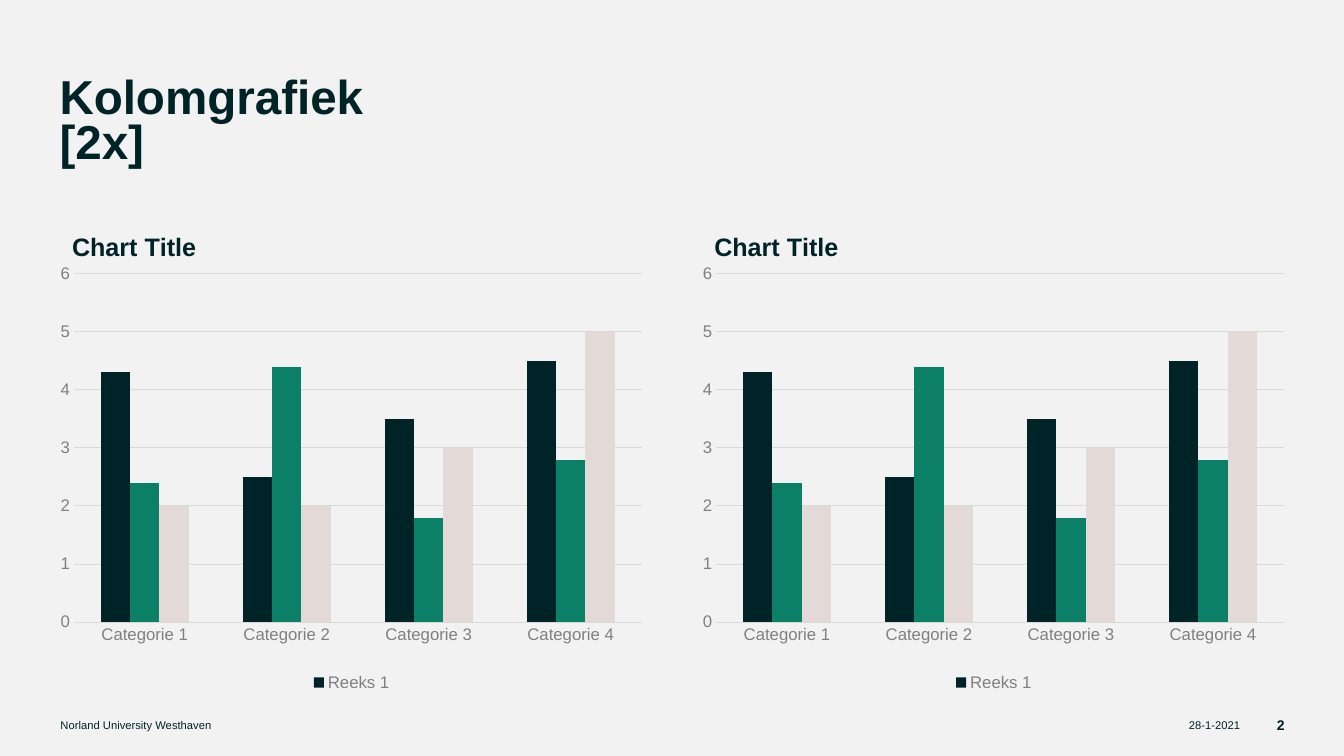
from dataclasses import dataclass
from typing import Any

from pptx import Presentation, oxml
from pptx import util as u
from pptx.chart import data
from pptx.dml import color
from pptx.enum import chart as ch, text
from pptx.oxml import ns

INK = color.RGBColor(0x00, 0x23, 0x28)
GREEN = color.RGBColor(0x0C, 0x80, 0x66)
SAND = color.RGBColor(0xE3, 0xDA, 0xD8)
GREY = color.RGBColor(0x80, 0x80, 0x80)
RULE = color.RGBColor(0xD9, 0xD9, 0xD9)
BLACK = color.RGBColor(0, 0, 0)
PAPER = color.RGBColor(0xF2, 0xF2, 0xF2)

GROUPS = [f"Categorie {n}" for n in range(1, 5)]
NO_PAD = dict.fromkeys(("margin_left", "margin_top", "margin_right", "margin_bottom"), 0)


@dataclass
class Series:
    name: str
    vals: tuple[float, ...]
    fill: color.RGBColor


@dataclass
class Label:
    words: str
    left: float
    width: float
    size: int = 8
    bold: bool = False
    align: Any = text.PP_ALIGN.RIGHT


SERIES = [
    Series("Reeks 1", (4.3, 2.5, 3.5, 4.5), INK),
    Series("Reeks 2", (2.4, 4.4, 1.8, 2.8), GREEN),
    Series("Reeks 3", (2, 2, 3, 5), SAND),
]
LABELS = [
    Label("Norland University Westhaven", 0.6, 10.79, align=text.PP_ALIGN.LEFT),
    Label("28-1-2021", 11.54, 0.76),
    Label("2", 12.45, 0.29, size=10, bold=True),
]
CHART_LEFTS = (6.97, 0.6)


def assign(item: Any, **vals: Any) -> None:
    for key, val in vals.items():
        setattr(item, key, val)


def style(font: Any, size: float, tint: color.RGBColor, bold: bool = False) -> None:
    assign(font, name="Arial", size=u.Pt(size), bold=bold)
    font.color.rgb = tint


def rule(line: Any) -> None:
    line.width = u.Pt(0.75)
    line.color.rgb = RULE


def node(xml: str) -> Any:
    head, tail = xml.split(">", 1) if not xml.endswith("/>") else (xml[:-2], None)
    opened = f"{head} {ns.nsdecls('c')}"
    return oxml.parse_xml(f"{opened}/>" if tail is None else f"{opened}>{tail}")


def layout(host: Any, spot: int, **vals: Any) -> None:
    for old in host.findall(ns.qn("c:layout")):
        host.remove(old)
    parts = "".join(f'<c:{key} val="{val}"/>' for key, val in vals.items())
    host.insert(spot, node(f"<c:layout><c:manualLayout>{parts}</c:manualLayout></c:layout>"))


def add_title(slide: Any) -> None:
    title = slide.shapes.title
    assign(title, left=u.Inches(0.59), top=u.Inches(0.79),
           width=u.Inches(12.15), height=u.Inches(0.78))
    frame = title.text_frame
    frame.text = "Kolomgrafiek\v[2x]"
    assign(frame, **NO_PAD, word_wrap=True, auto_size=text.MSO_AUTO_SIZE.NONE,
           vertical_anchor=text.MSO_ANCHOR.TOP)
    para = frame.paragraphs[0]
    assign(para, alignment=text.PP_ALIGN.LEFT, line_spacing=u.Pt(32))
    for run in para.runs:
        style(run.font, 34, INK, True)


def add_label(slide: Any, label: Label) -> None:
    box = slide.shapes.add_textbox(u.Inches(label.left), u.Inches(7.12),
                                   u.Inches(label.width), u.Inches(0.14))
    frame = box.text_frame
    frame.text = label.words
    assign(frame, **NO_PAD, word_wrap=True, vertical_anchor=text.MSO_ANCHOR.MIDDLE)
    para = frame.paragraphs[0]
    para.alignment = label.align
    style(para.runs[0].font, label.size, INK, label.bold)


def add_chart(slide: Any, left: float) -> None:
    table = data.CategoryChartData()
    table.categories = GROUPS
    for item in SERIES:
        table.add_series(item.name, item.vals)
    chart = slide.shapes.add_chart(
        ch.XL_CHART_TYPE.COLUMN_CLUSTERED, u.Inches(left), u.Inches(2.15),
        u.Inches(5.77), u.Inches(4.75), table).chart
    style(chart.font, 10, BLACK)

    plot = chart.plots[0]
    assign(plot, gap_width=182, overlap=0, vary_by_categories=False)
    for bar, item in zip(plot.series, SERIES):
        bar.format.fill.solid()
        bar.format.fill.fore_color.rgb = item.fill
    layout(chart._chartSpace.chart.plotArea, 0, layoutTarget="inner", xMode="edge",
           yMode="edge", x=0.021, y=0.119, w=0.979, h=0.728)

    for axis in (chart.category_axis, chart.value_axis):
        assign(axis, major_tick_mark=ch.XL_TICK_MARK.NONE,
               minor_tick_mark=ch.XL_TICK_MARK.NONE)
        style(axis.tick_labels.font, 12, GREY)
    rule(chart.category_axis.format.line)
    scale = chart.value_axis
    assign(scale, minimum_scale=0, maximum_scale=6, major_unit=1)
    scale.format.line.fill.background()
    rule(scale.major_gridlines.format.line)

    title = chart.chart_title
    title.text_frame.text = "Chart Title"
    style(title.text_frame.paragraphs[0].runs[0].font, 18, INK, True)
    layout(title._element, 1, xMode="edge", yMode="edge", x=0.01, y=0.02)

    chart.has_legend = True
    legend = chart.legend
    assign(legend, position=ch.XL_LEGEND_POSITION.BOTTOM, include_in_layout=False)
    style(legend.font, 12, GREY)
    for spot in range(1, len(SERIES)):
        legend._element.insert(spot, node(
            f'<c:legendEntry><c:idx val="{spot}"/><c:delete val="1"/></c:legendEntry>'))


def main() -> None:
    deck = Presentation()
    assign(deck, slide_width=u.Inches(13.33), slide_height=u.Inches(7.5))
    slide = deck.slides.add_slide(deck.slide_layouts[5])
    slide.background.fill.solid()
    slide.background.fill.fore_color.rgb = PAPER
    add_title(slide)
    for label in LABELS:
        add_label(slide, label)
    for left in CHART_LEFTS:
        add_chart(slide, left)
    deck.save("out.pptx")


if __name__ == "__main__":
    main()
